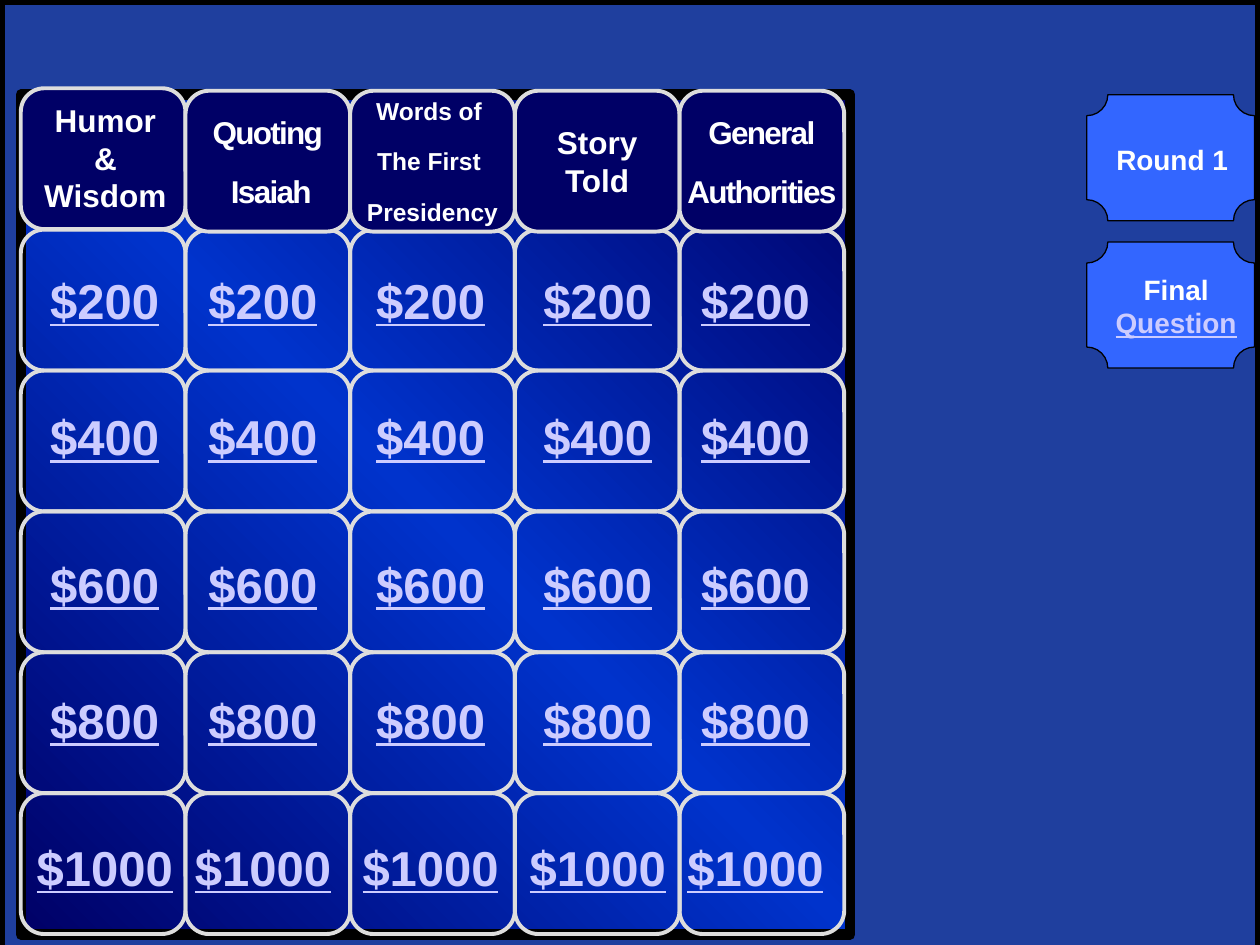
from copy import deepcopy

from lxml.etree import SubElement
from pptx import Presentation
from pptx.dml.color import RGBColor
from pptx.enum.shapes import MSO_SHAPE as Preset
from pptx.enum.text import MSO_ANCHOR as Anchor, MSO_AUTO_SIZE as AutoSize, PP_ALIGN as Align
from pptx.oxml.ns import qn
from pptx.util import Cm, Pt

WIDTH, HEIGHT = 25.4, 19.05
BLACK, WHITE, NAVY, ROYAL = "000000", "FFFFFF", "000066", "0033CC"
BRIGHT, SILVER, LAVENDER = "3366FF", "DDDDDD", "CCCCFF"

CATEGORIES = [
    (["Quoting", " Isaiah"], dict(size=18, after=12, tracking=-1)),
    (["Words of ", "The First ", "Presidency"], dict(size=14, after=12)),
    (["Story", "Told"], dict(size=18)),
    (["General", "Authorities"], dict(size=18, after=12, tracking=-1)),
]
FIRST_CATEGORY = "Humor & Wisdom"
PRIZES = [("$200", 5.33), ("$400", 8.08), ("$600", 11.05), ("$800", 13.79), ("$1000", 16.76)]
PRIZE_LEFTS = [0.42, 3.61, 6.99, 10.36, 13.54]
ROUNDS = [
    (1.91, [("Round 1", {})], (21.89, 2.74, 3.48, 0.94)),
    (4.88, [("Final ", {}), ("Question", dict(color=LAVENDER, underline=True))],
     (22.12, 5.36, 3.18, 1.63)),
]
GRID_LEFT, GRID_TOP, CELL_WIDTH, CELL_HEIGHT = 0.42, 4.63, 3.32, 2.84
HEADER_TOP, FIRST_HEADER_TOP = 1.83, 1.78


def rgb(value):
    return RGBColor.from_string(value)


def add_box(slide, preset, bounds, line, weight, fill=None):
    shape = slide.shapes.add_shape(preset, *map(Cm, bounds))
    shape.shadow.inherit = False
    shape.line.color.rgb = rgb(line)
    shape.line.width = Pt(weight)
    if fill:
        shape.fill.solid()
        shape.fill.fore_color.rgb = rgb(fill)
    else:
        shape.fill.background()
    return shape


def add_run(paragraph, text, size=18, color=WHITE, underline=None, tracking=0):
    run = paragraph.add_run()
    run.text = text
    run.font.name = "Arial"
    run.font.size = Pt(size)
    run.font.bold = True
    run.font.underline = underline
    run.font.color.rgb = rgb(color)
    if tracking:
        run.font._element.set("spc", str(tracking * 100))


def write(shape, paragraphs, wrap=True, anchor=Anchor.TOP, after=0, **style):
    frame = shape.text_frame
    frame.word_wrap = wrap
    frame.vertical_anchor = anchor
    for index, runs in enumerate(paragraphs):
        paragraph = frame.add_paragraph() if index else frame.paragraphs[0]
        paragraph.alignment = Align.CENTER
        paragraph.space_after = Pt(after)
        for text, extra in runs:
            add_run(paragraph, text, **{**style, **extra})


def add_label(slide, runs, bounds, **style):
    label = slide.shapes.add_textbox(*map(Cm, bounds))
    label.text_frame.auto_size = AutoSize.SHAPE_TO_FIT_TEXT
    write(label, [runs], **style)


def set_alpha(shape, percent):
    color = shape.fill._xPr.find(qn("a:solidFill"))[0]
    SubElement(color, qn("a:alpha"), val=str(percent * 1000))


def set_gradient(shape, colors, angle):
    shape.fill.gradient()
    shape.fill.gradient_angle = angle
    stop_list = shape.fill._xPr.find(qn("a:gradFill")).find(qn("a:gsLst"))
    stop_list.insert(1, deepcopy(stop_list[0]))
    for index, (stop, color) in enumerate(zip(shape.fill.gradient_stops, colors)):
        stop.position = index / (len(colors) - 1)
        stop.color.rgb = rgb(color)


def add_background(slide):
    add_box(slide, Preset.RECTANGLE, (0, 0, WIDTH, HEIGHT), BLACK, 0.75, BLACK)
    tint = add_box(slide, Preset.RECTANGLE, (0, 0, WIDTH, 19.25), BLACK, 6, BRIGHT)
    set_alpha(tint, 62)
    board = add_box(slide, Preset.RECTANGLE, (0.42, 1.91, 16.72, 16.93), BLACK, 6)
    set_gradient(board, [NAVY, ROYAL, NAVY], 45)


def add_cell(slide, column, top, fill=None):
    bounds = (GRID_LEFT + column * CELL_WIDTH, top, CELL_WIDTH, CELL_HEIGHT)
    return add_box(slide, Preset.ROUNDED_RECTANGLE, bounds, SILVER, 2.25, fill)


def add_board(slide):
    for column in range(len(PRIZE_LEFTS)):
        for row in range(len(PRIZES)):
            add_cell(slide, column, GRID_TOP + row * CELL_HEIGHT)
    add_cell(slide, 0, FIRST_HEADER_TOP, NAVY)
    for column, (lines, style) in enumerate(CATEGORIES, start=1):
        header = add_cell(slide, column, HEADER_TOP, NAVY)
        write(header, [[(line, {})] for line in lines],
              wrap=False, anchor=Anchor.MIDDLE, **style)
    add_label(slide, [(FIRST_CATEGORY, {})], (0.64, 1.91, 2.97, 2.57))
    for prize, top in PRIZES:
        for left in PRIZE_LEFTS:
            add_label(slide, [(prize, {})], (left, top, 3.38, 1.45),
                      size=28, color=LAVENDER, underline=True)


def add_rounds(slide):
    for top, runs, label_bounds in ROUNDS:
        add_box(slide, Preset.PLAQUE, (21.91, top, 3.38, 2.54), BLACK, 0.75, BRIGHT)
        add_label(slide, runs, label_bounds, size=16)


def main():
    presentation = Presentation()
    presentation.slide_width, presentation.slide_height = Cm(WIDTH), Cm(HEIGHT)
    slide = presentation.slides.add_slide(presentation.slide_layouts[6])
    add_background(slide)
    add_board(slide)
    add_rounds(slide)
    presentation.save("out.pptx")


if __name__ == "__main__":
    main()
